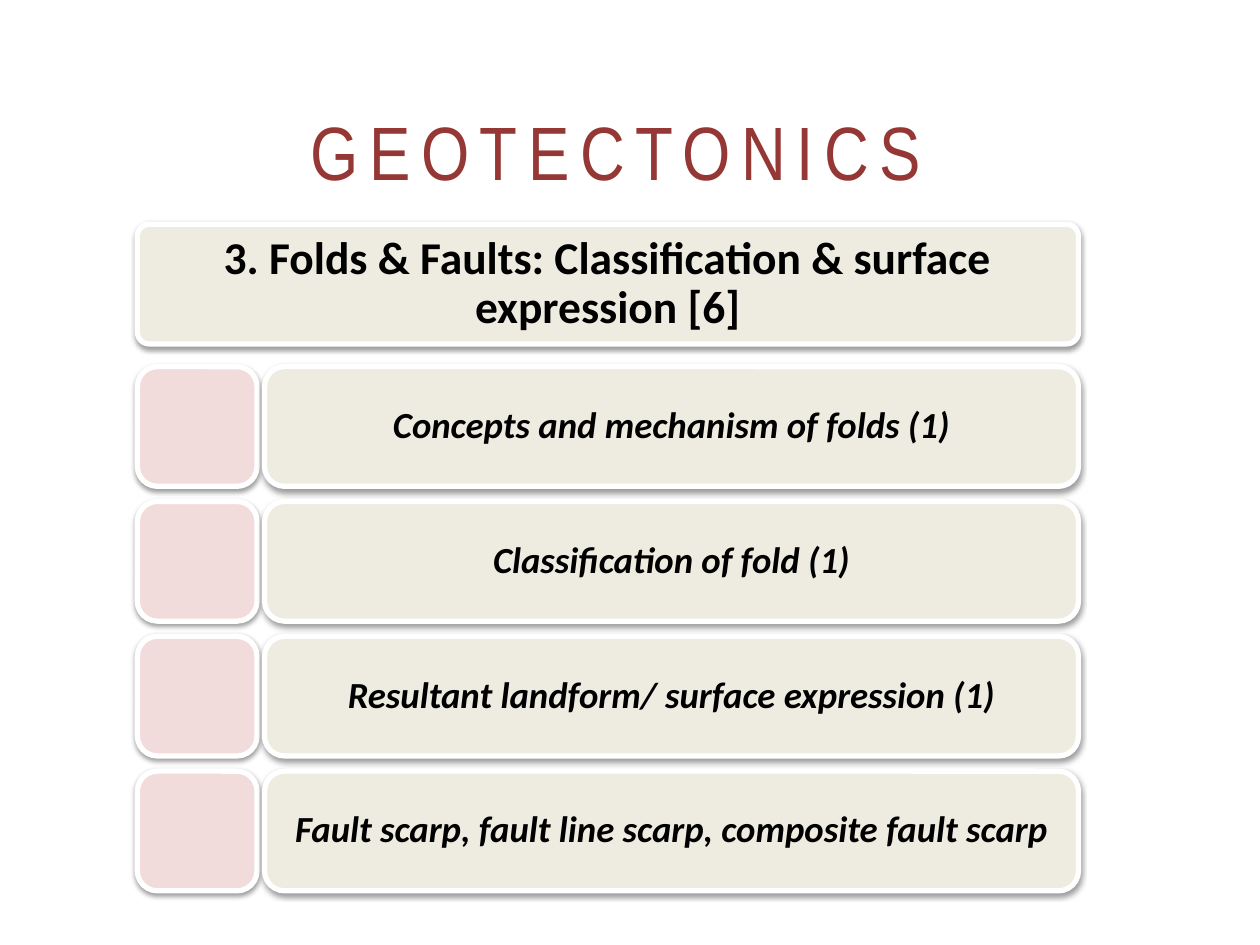
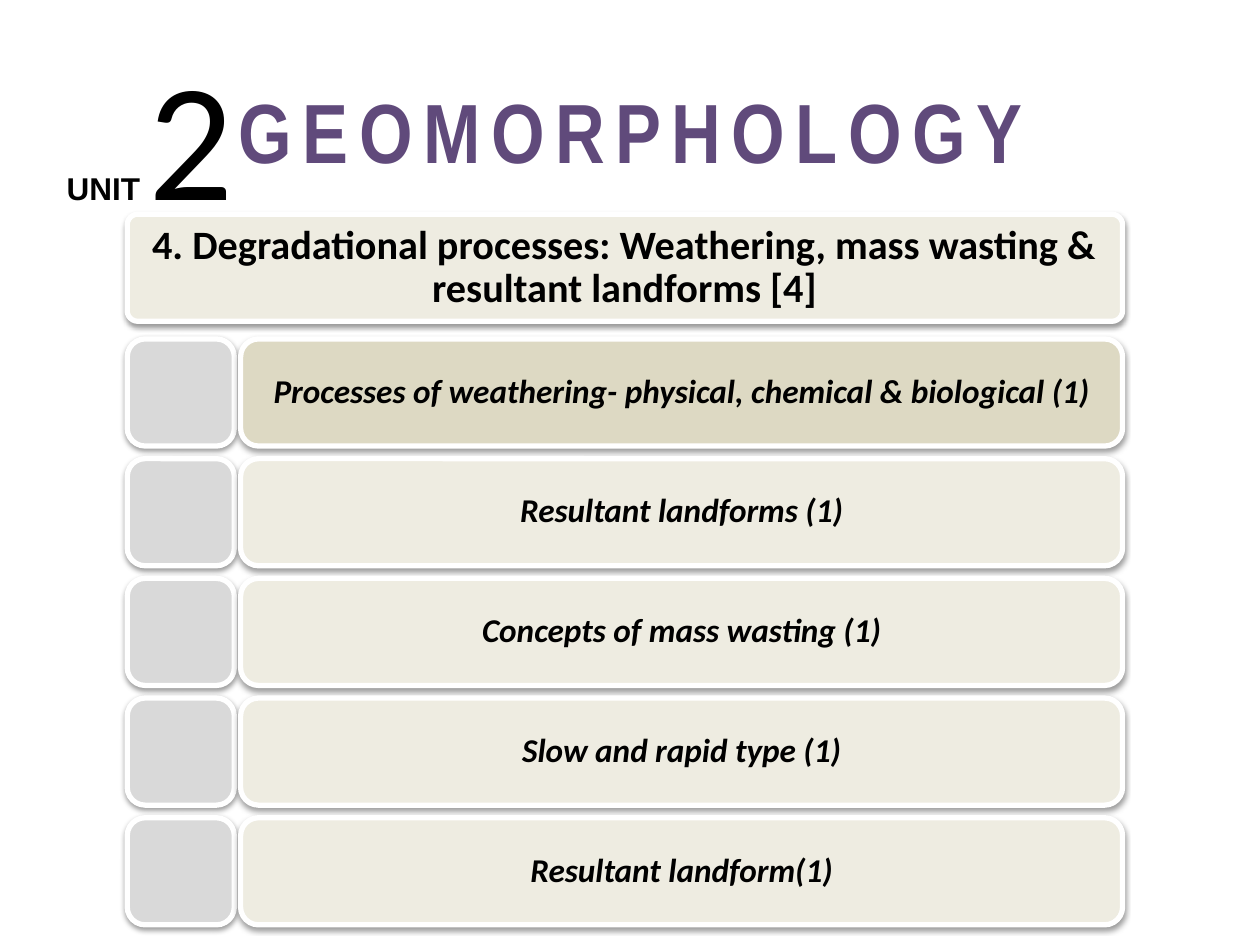
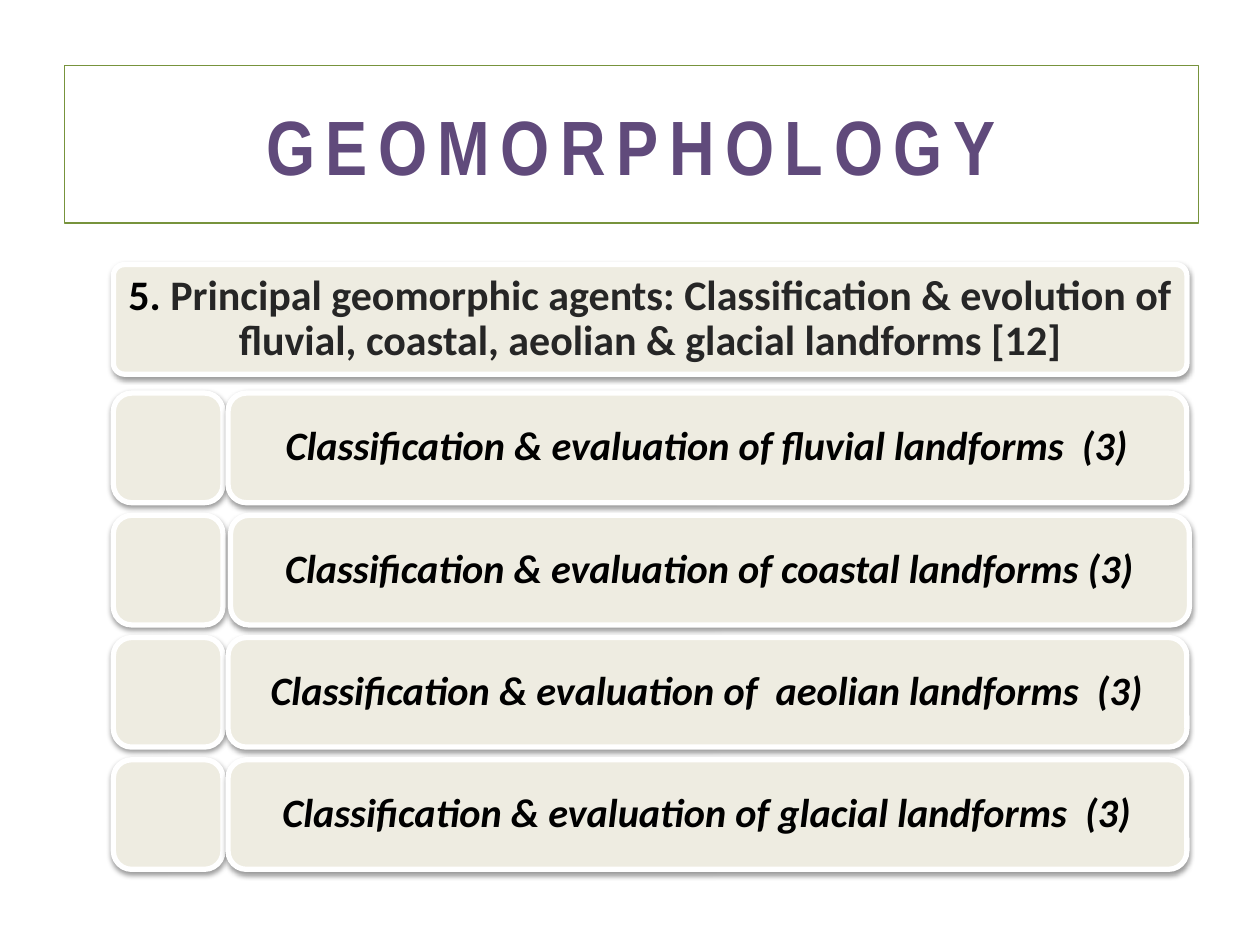
from dataclasses import dataclass

from lxml import etree
from pptx import Presentation
from pptx.dml.color import RGBColor
from pptx.enum import shapes, text
from pptx.oxml import ns
from pptx.util import Emu, Inches, Pt

# Shared colours
BLACK = RGBColor(0x00, 0x00, 0x00)
CHARCOAL = RGBColor(0x26, 0x26, 0x26)
WHITE = RGBColor(0xFF, 0xFF, 0xFF)
CREAM = RGBColor(0xEE, 0xEC, 0xE1)
SAND = RGBColor(0xDD, 0xD9, 0xC3)
PINK = RGBColor(0xF2, 0xDC, 0xDB)
GREY = RGBColor(0xD9, 0xD9, 0xD9)
RED = RGBColor(0x95, 0x37, 0x35)
PURPLE = RGBColor(0x60, 0x4A, 0x7B)
GREEN = RGBColor(0x77, 0x93, 0x3C)

# Shared styles
BODY_FONT, TITLE_FONT = "Calibri", "Arial Narrow"
TITLE_ONLY_LAYOUT = 5
HEADING_ROUND, TILE_ROUND = 0.1, 0.167
CORNER_TRIM = 0.29  # share of the corner radius that already pads the text


@dataclass
class Area:
    left: float
    top: float
    width: float
    height: float

    def lengths(self) -> tuple:
        return tuple(Inches(v) for v in (self.left, self.top, self.width, self.height))


@dataclass
class Span:
    words: str
    size: float
    color: RGBColor = BLACK
    font: str = BODY_FONT
    bold: bool = True
    italic: bool = False
    spacing: float = 0


@dataclass
class Title:
    span: Span
    area: Area
    border: RGBColor | None = None


@dataclass
class Topic:
    words: str
    fill: RGBColor = CREAM
    nudge: float = 0


@dataclass
class Outline:
    heading: list[Span]
    topics: list[Topic]
    heading_area: Area
    first_row: float
    row_step: float
    topic_left: float
    topic_size: float
    topic_inset: float
    tile_fill: RGBColor


def add_span(para, span: Span) -> None:
    run = para.add_run()
    run.text = span.words
    run.font.name = span.font
    run.font.size = Pt(span.size)
    run.font.bold = span.bold
    run.font.italic = span.italic
    run.font.color.rgb = span.color
    if span.spacing:
        run.font._element.set("spc", str(round(span.spacing * 100)))


def add_shadow(shape) -> None:
    shape.shadow.inherit = False
    effects = shape._element.spPr.find(ns.qn("a:effectLst"))
    shadow = etree.SubElement(effects, ns.qn("a:outerShdw"), blurRad=str(Pt(3.1)),
                              dist=str(Pt(1.6)), dir="5400000", rotWithShape="0")
    color = etree.SubElement(shadow, ns.qn("a:srgbClr"), val=str(BLACK))
    etree.SubElement(color, ns.qn("a:alpha"), val="38000")


def add_tile(page, area: Area, fill: RGBColor, rounding: float = TILE_ROUND,
             spans: list[Span] | None = None, inset: tuple = (0, 0)) -> None:
    tile = page.shapes.add_shape(shapes.MSO_SHAPE.ROUNDED_RECTANGLE, *area.lengths())
    tile.adjustments[0] = rounding
    tile.fill.solid()
    tile.fill.fore_color.rgb = fill
    tile.line.color.rgb = WHITE
    tile.line.width = Pt(3)
    add_shadow(tile)
    if not spans:
        return
    frame = tile.text_frame
    frame.word_wrap = True
    frame.vertical_anchor = text.MSO_ANCHOR.MIDDLE
    trim = CORNER_TRIM * rounding * area.height
    across, down = (Emu(Inches(max(0, side - trim))) for side in inset)
    frame.margin_left = frame.margin_right = across
    frame.margin_top = frame.margin_bottom = down
    para = frame.paragraphs[0]
    para.alignment = text.PP_ALIGN.CENTER
    para.line_spacing = 0.9
    for span in spans:
        add_span(para, span)


def add_page(deck, title: Title):
    page = deck.slides.add_slide(deck.slide_layouts[TITLE_ONLY_LAYOUT])
    box = page.shapes.title
    box.left, box.top, box.width, box.height = title.area.lengths()
    if title.border is not None:
        box.line.color.rgb = title.border
        box.line.width = Pt(0.75)
    frame = box.text_frame
    frame.auto_size = text.MSO_AUTO_SIZE.NONE
    frame.vertical_anchor = text.MSO_ANCHOR.MIDDLE
    para = frame.paragraphs[0]
    para.alignment = text.PP_ALIGN.CENTER
    add_span(para, title.span)
    return page


def add_outline(page, outline: Outline) -> None:
    head = outline.heading_area
    add_tile(page, head, CREAM, HEADING_ROUND, outline.heading, (0.05, 0.03))
    topic_width = head.left + head.width - outline.topic_left
    for row, topic in enumerate(outline.topics):
        top = outline.first_row + row * outline.row_step
        add_tile(page, Area(head.left, top, head.height, head.height), outline.tile_fill)
        area = Area(outline.topic_left + topic.nudge, top, topic_width, head.height)
        span = Span(topic.words, outline.topic_size, italic=True)
        add_tile(page, area, topic.fill, spans=[span], inset=(outline.topic_inset,) * 2)


def add_unit_label(page) -> None:
    box = page.shapes.add_textbox(*Area(0.43, 0.21, 1.65, 1.72).lengths())
    box.text_frame.word_wrap = True
    box.text_frame.auto_size = text.MSO_AUTO_SIZE.SHAPE_TO_FIT_TEXT
    para = box.text_frame.paragraphs[0]
    add_span(para, Span("UNIT ", 18, font="Arial"))
    add_span(para, Span("2", 96, bold=False))


def title_span(words: str, size: float, color: RGBColor, bold: bool = True) -> Span:
    return Span(words, size, color, TITLE_FONT, bold, spacing=6)


def main() -> None:
    deck = Presentation()
    deck.slide_width, deck.slide_height = Inches(10), Inches(7.5)

    # Folds and faults
    page = add_page(deck, Title(title_span("GEOTECTONICS ", 43.2, RED, bold=False),
                                Area(0.5, 0.77, 9, 0.85)))
    add_outline(page, Outline(
        heading=[Span("3. Folds & Faults: Classification & surface expression [6]", 26)],
        topics=[
            Topic("Concepts and mechanism of folds (1)"),
            Topic("Classification of fold (1)"),
            Topic("Resultant landform/ surface expression (1)"),
            Topic("Fault scarp, fault line scarp, composite fault scarp"),
        ],
        heading_area=Area(1.09, 1.78, 7.47, 0.95), first_row=2.91, row_step=1.07,
        topic_left=2.1, topic_size=21, topic_inset=0.16, tile_fill=PINK))

    # Degradational processes
    page = add_page(deck, Title(title_span("GEOMORPHOLOGY", 48, PURPLE),
                                Area(0.51, 0.44, 9, 1.18)))
    add_outline(page, Outline(
        heading=[Span("4. Degradational processes: Weathering, mass wasting & "
                      "resultant landforms [4]", 23)],
        topics=[
            Topic("Processes of weathering- physical, chemical & biological (1)", SAND),
            Topic("Resultant landforms (1)"),
            Topic("Concepts of mass wasting (1)"),
            Topic("Slow and rapid type (1)"),
            Topic("Resultant landform(1)"),
        ],
        heading_area=Area(1.01, 1.7, 7.9, 0.85), first_row=2.69, row_step=0.95,
        topic_left=1.91, topic_size=19, topic_inset=0.15, tile_fill=GREY))
    add_unit_label(page)

    # Geomorphic agents
    page = add_page(deck, Title(title_span("GEOMORPHOLOGY", 44, PURPLE),
                                Area(0.51, 0.52, 9, 1.25), GREEN))
    add_outline(page, Outline(
        heading=[
            Span("5. ", 24),
            Span("Principal geomorphic agents: Classification & evolution of fluvial, "
                 "coastal, aeolian & glacial landforms [12]", 24, CHARCOAL),
        ],
        topics=[
            Topic("Classification & evaluation of fluvial landforms  (3)"),
            Topic("Classification & evaluation of coastal landforms (3)", nudge=0.02),
            Topic("Classification & evaluation of  aeolian landforms  (3)"),
            Topic("Classification & evaluation of glacial landforms  (3)"),
        ],
        heading_area=Area(0.9, 2.1, 8.52, 0.87), first_row=3.12, row_step=0.97,
        topic_left=1.81, topic_size=23, topic_inset=0.18, tile_fill=CREAM))

    deck.save("out.pptx")


if __name__ == "__main__":
    main()
